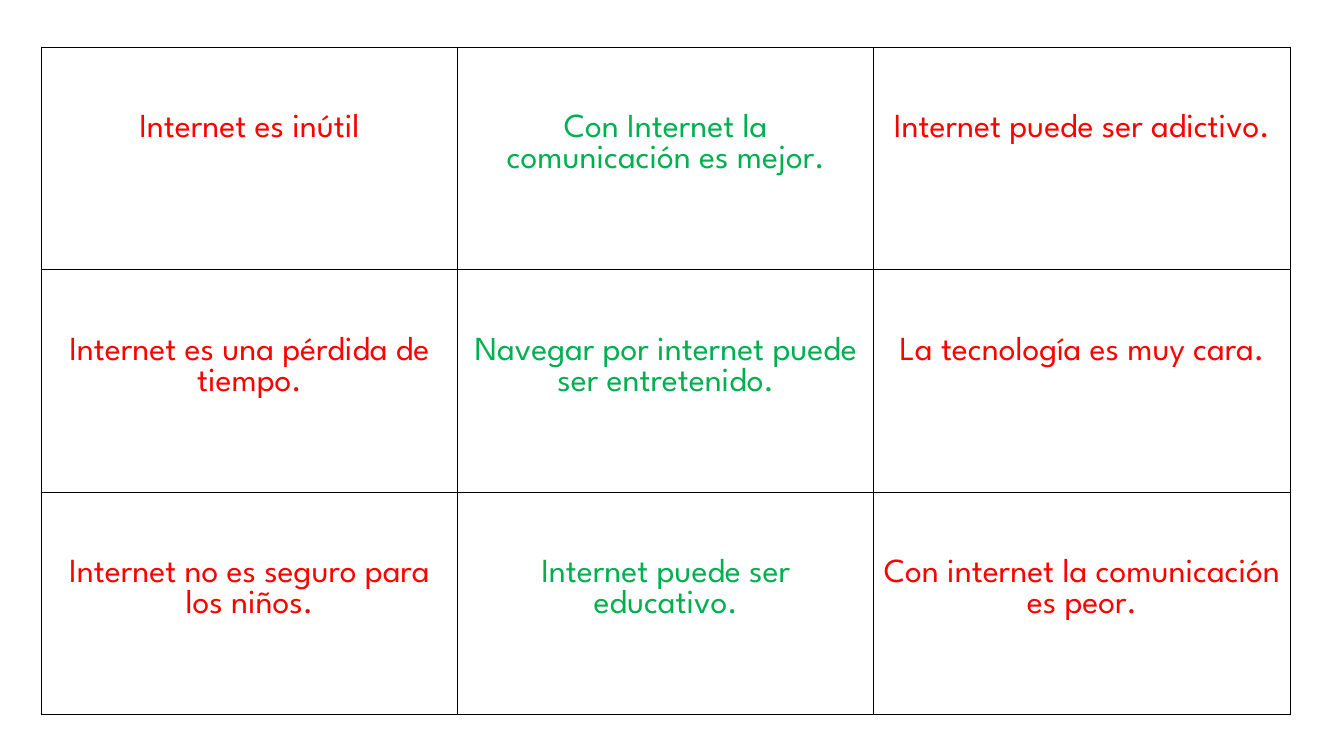
"""Build a slide with a three by three table of opinions about the Internet."""
from typing import NamedTuple

from lxml import etree
from pptx import Presentation
from pptx.dml.color import RGBColor
from pptx.enum.text import MSO_ANCHOR, PP_ALIGN
from pptx.oxml.ns import qn
from pptx.table import _Cell
from pptx.util import Pt

CENTER = PP_ALIGN.CENTER
TOP = MSO_ANCHOR.TOP

AGAINST = RGBColor(0xFF, 0x00, 0x00)
IN_FAVOUR = RGBColor(0x00, 0xB0, 0x50)
BORDER = RGBColor(0x00, 0x00, 0x00)

FONT = "League Spartan"
COLUMNS = 3
GRID_LEFT, GRID_TOP = 29.5, 33.8
CELL_WIDTH, CELL_HEIGHT = 297.36, 158.9
TEXT_DROP = 47.8


class Opinion(NamedTuple):
    """A statement and the colour of its stance."""
    statement: str
    stance: RGBColor


OPINIONS = [
    Opinion("Internet es inútil", AGAINST),
    Opinion("Con Internet la comunicación es mejor.", IN_FAVOUR),
    Opinion("Internet puede ser adictivo.", AGAINST),
    Opinion("Internet es una pérdida de tiempo.", AGAINST),
    Opinion("Navegar por internet puede ser entretenido.", IN_FAVOUR),
    Opinion("La tecnología es muy cara.", AGAINST),
    Opinion("Internet no es seguro para los niños.", AGAINST),
    Opinion("Internet puede ser educativo.", IN_FAVOUR),
    Opinion("Con internet la comunicación es peor.", AGAINST),
]


def write(cell: _Cell, text: str, *, color: RGBColor, size: float = 24,
          font: str = FONT, align: PP_ALIGN = CENTER) -> None:
    """Write formatted text into a cell."""
    paragraph = cell.text_frame.paragraphs[0]
    paragraph.alignment = align
    run = paragraph.add_run()
    run.text = text
    run.font.name = font
    run.font.size = Pt(size)
    run.font.bold = False
    run.font.color.rgb = color


def outline(cell: _Cell, color: RGBColor = BORDER, width: float = 1) -> None:
    """Draw a solid border on the four sides of a cell."""
    properties = cell._tc.get_or_add_tcPr()
    for position, side in enumerate(("a:lnL", "a:lnR", "a:lnT", "a:lnB")):
        line = etree.Element(qn(side), w=str(Pt(width)))
        fill = etree.SubElement(line, qn("a:solidFill"))
        etree.SubElement(fill, qn("a:srgbClr"), val=str(color))
        properties.insert(position, line)


def draw_opinion(cell: _Cell, opinion: Opinion) -> None:
    """Fill one cell with an opinion."""
    cell.fill.background()
    cell.vertical_anchor = TOP
    cell.margin_top = Pt(TEXT_DROP)
    write(cell, opinion.statement, color=opinion.stance)
    outline(cell)


def main() -> None:
    """Build and save the slide."""
    deck = Presentation()
    deck.slide_width, deck.slide_height = Pt(960), Pt(540)
    slide = deck.slides.add_slide(deck.slide_layouts[6])
    rows = len(OPINIONS) // COLUMNS
    grid = slide.shapes.add_table(
        rows, COLUMNS, Pt(GRID_LEFT), Pt(GRID_TOP),
        Pt(CELL_WIDTH * COLUMNS), Pt(CELL_HEIGHT * rows)).table
    grid.first_row = False
    grid.horz_banding = False
    for cell, opinion in zip(grid.iter_cells(), OPINIONS):
        draw_opinion(cell, opinion)
    deck.save("out.pptx")


if __name__ == "__main__":
    main()
